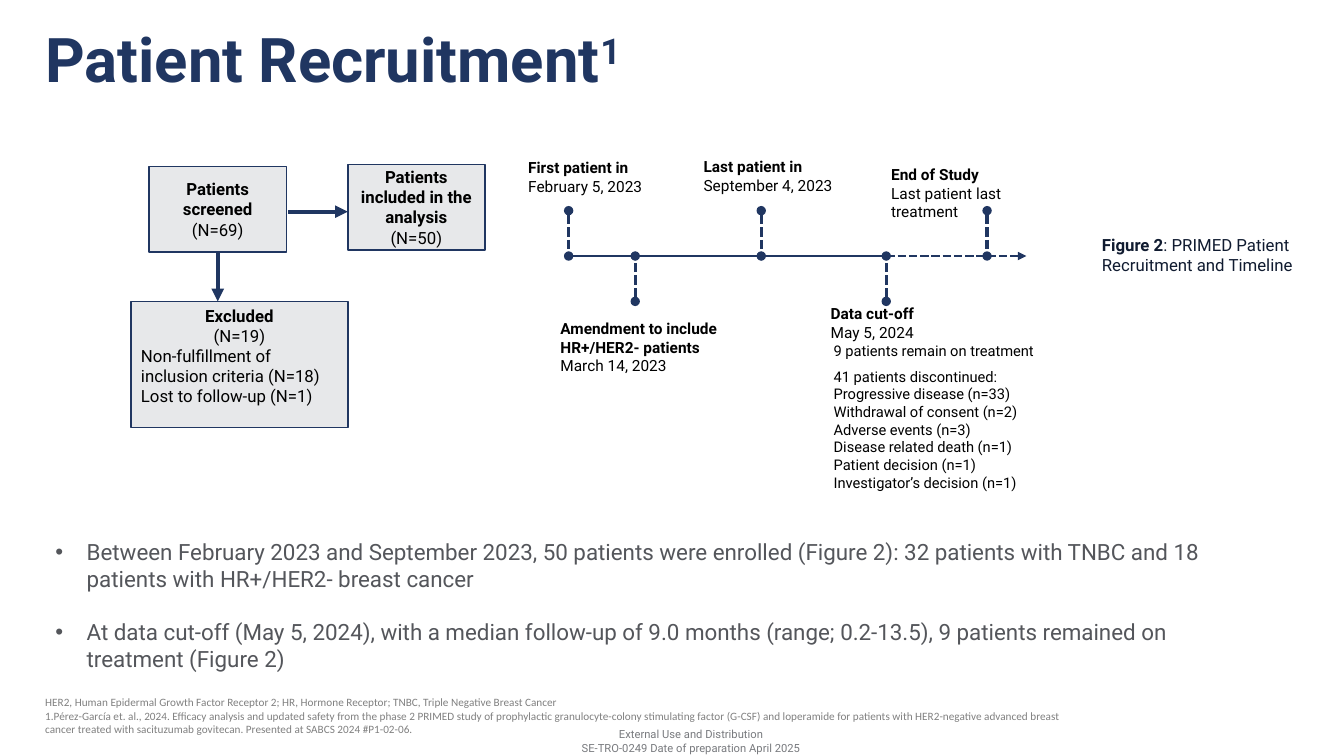
from pptx import Presentation
from pptx.dml.color import RGBColor
from pptx.enum.dml import MSO_LINE
from pptx.enum.shapes import MSO_CONNECTOR, MSO_SHAPE
from pptx.enum.text import MSO_ANCHOR, MSO_AUTO_SIZE, PP_ALIGN
from pptx.oxml.ns import qn
from pptx.util import Inches, Pt
from lxml.etree import SubElement as Sub

NAVY, GREY, BLACK = "203661", "E7E8EA", "000000"

# Content
TITLE = ("Patient Recruitment", "1")
POINTS = [
    "Between February 2023 and September 2023, 50 patients were enrolled (Figure 2): "
    "32 patients with TNBC and 18 patients with HR+/HER2- breast cancer",
    "At data cut-off (May 5, 2024), with a median follow-up of 9.0 months "
    "(range; 0.2-13.5), 9 patients remained on treatment (Figure 2)",
]
# Flow boxes: place, heading, count, reasons
FLOW = [
    ((1.48, 1.65, 1.36, 0.85), "Patients screened", "(N=69)", []),
    ((3.45, 1.63, 1.36, 0.85), "Patients included in the analysis", "(N=50)", []),
    ((1.3, 2.99, 2.15, 1.25), "Excluded", "(N=19)",
     ["Non-fulfillment of inclusion criteria (N=18)", "Lost to follow-up (N=1)"]),
]
ARROWS = [((2.16, 2.51), (2.16, 2.99)), ((2.86, 2.1), (3.45, 2.1))]
# Timeline events: x on the axis, stem direction, label place, heading, detail
EVENTS = [
    (5.64, -1, (5.14, 1.52, 1.4, 0.47), "First patient in", "February 5, 2023"),
    (6.3, 1, (5.46, 3.12, 1.94, 0.66), "Amendment to include HR+/HER2- patients",
     "March 14, 2023"),
    (7.55, -1, (6.88, 1.51, 1.59, 0.47), "Last patient in", "September 4, 2023"),
    (8.79, 1, (8.14, 2.97, 1.76, 0.47), "Data cut-off", "May 5, 2024"),
    (9.79, -1, (8.74, 1.59, 1.93, 0.66), "End of Study", "Last patient last treatment"),
]
AXIS, STEM, END = 2.54, 0.45, 10.18
STATUS = [
    "9 patients remain on treatment",
    "41 patients discontinued:",
    "Progressive disease (n=33)",
    "Withdrawal of consent (n=2)",
    "Adverse events (n=3)",
    "Disease related death (n=1)",
    "Patient decision (n=1)",
    "Investigator’s decision (n=1)",
]
CAPTION = [("Figure 2", True), (": PRIMED Patient Recruitment and Timeline", False)]
NOTES = [
    "HER2, Human Epidermal Growth Factor Receptor 2; HR, Hormone Receptor; "
    "TNBC, Triple Negative Breast Cancer",
    "1.Pérez-García et. al., 2024. Efficacy analysis and updated safety from the phase 2 "
    "PRIMED study of prophylactic granulocyte-colony stimulating factor (G-CSF) and "
    "loperamide for patients with HER2-negative advanced breast cancer treated with "
    "sacituzumab govitecan. Presented at SABCS 2024 #P1-02-06.",
]
FOOTER = ["External Use and Distribution", "SE-TRO-0249 Date of preparation April 2025"]

deck = Presentation()
deck.slide_width, deck.slide_height = Inches(13.33), Inches(7.5)
slide = deck.slides.add_slide(deck.slide_layouts[1])
shapes = slide.shapes


def color(code):
    return RGBColor.from_string(code)


def place(shape, box):
    shape.left, shape.top, shape.width, shape.height = map(Inches, box)


def add_run(para, text, size, code=BLACK, bold=False, face="Roboto"):
    run = para.add_run()
    run.text = text
    font = run.font
    font.name, font.size, font.bold = face, Pt(size), bold
    font.color.rgb = color(code)
    return run


def write(frame, paras, size, code=BLACK, face="Roboto", align=PP_ALIGN.LEFT):
    """Each paragraph is a list of (text, bold) runs."""
    frame.word_wrap = True
    for i, runs in enumerate(paras):
        para = frame.add_paragraph() if i else frame.paragraphs[0]
        para.alignment = align
        for text, bold in runs:
            add_run(para, text, size, code, bold, face)


def label(box, paras, size, **style):
    frame = shapes.add_textbox(*map(Inches, box)).text_frame
    write(frame, paras, size, **style)
    return frame


def plain(lines):
    return [[(line, False)] for line in lines]


def link(start, stop, width, head=None, tail=None, dash=False):
    line = shapes.add_connector(MSO_CONNECTOR.STRAIGHT, *map(Inches, start + stop))
    line.line.color.rgb = color(NAVY)
    line.line.width = Pt(width)
    if dash:
        line.line.dash_style = MSO_LINE.SQUARE_DOT
    props = line._element.spPr
    for tag, kind in (("a:headEnd", head), ("a:tailEnd", tail)):
        if kind:
            Sub(props.find(qn("a:ln")), qn(tag), type=kind)
    Sub(props, qn("a:effectLst"))


# Title
title = shapes.title
place(title, (0.35, 0.27, 12, 1.08))
frame = title.text_frame
frame.auto_size = MSO_AUTO_SIZE.NONE
frame.vertical_anchor = MSO_ANCHOR.TOP
frame.margin_top = Inches(0.08)
write(frame, [[(text, True) for text in TITLE]], 44, NAVY)
para = frame.paragraphs[0]
para.line_spacing = 0.8
para.runs[1]._r.get_or_add_rPr().set("baseline", "30000")

# Bulleted findings
body = slide.placeholders[1]
place(body, (0.45, 5.29, 12, 1.72))
frame = body.text_frame
frame.auto_size = MSO_AUTO_SIZE.NONE
write(frame, plain(POINTS), 16, "54565B")
for i, para in enumerate(frame.paragraphs):
    props = para._p.get_or_add_pPr()
    props.set("marL", str(Inches(0.31)))
    props.set("indent", str(-Inches(0.31)))
    Sub(props, qn("a:buFont"), typeface="Arial")
    Sub(props, qn("a:buChar"), char="•")
    para.space_before = Pt(19 * i)

# Patient flow
for box, head, count, reasons in FLOW:
    rect = shapes.add_shape(MSO_SHAPE.RECTANGLE, *map(Inches, box))
    rect.shadow.inherit = False
    rect.fill.solid()
    rect.fill.fore_color.rgb = color(GREY)
    rect.line.color.rgb = color(NAVY)
    rect.line.width = Pt(1)
    frame = rect.text_frame
    frame.vertical_anchor = MSO_ANCHOR.MIDDLE
    write(frame, [[(head, True)]] + plain([count] + reasons), 12, align=PP_ALIGN.CENTER)
    for para in frame.paragraphs[2:]:
        para.alignment = PP_ALIGN.LEFT
    if reasons:
        frame.margin_bottom = Inches(0.22)
for start, stop in ARROWS:
    link(start, stop, 3, tail="triangle")

# Timeline axis, dashed after the data cut-off
stops = [event[0] for event in EVENTS[:4]]
for left, right in zip(stops, stops[1:]):
    link((left, AXIS), (right, AXIS), 2, "oval", "oval")
link((stops[-1], AXIS), (END, AXIS), 2, tail="triangle", dash=True)

# Timeline events
for x, way, box, head, detail in EVENTS:
    link((x, AXIS + way * STEM), (x, AXIS), 2.25, "oval", "oval", True)
    label(box, [[(head, True)], [(detail, False)]], 11)
status = label((8.17, 3.34, 2.25, 1.78), plain(STATUS), 10.5)
status.paragraphs[0].space_after = Pt(6)

# Caption, references and footer
label((10.83, 2.28, 2.21, 0.5), [CAPTION], 12, code="101B30")
label((0.35, 6.85, 10.58, 0.5), plain(NOTES), 8, code="808080", face="Calibri")
foot = label((5.14, 7.19, 3.43, 0.32), plain(FOOTER), 8, code="787A7E",
             align=PP_ALIGN.CENTER)
foot.vertical_anchor = MSO_ANCHOR.MIDDLE

deck.save("out.pptx")
